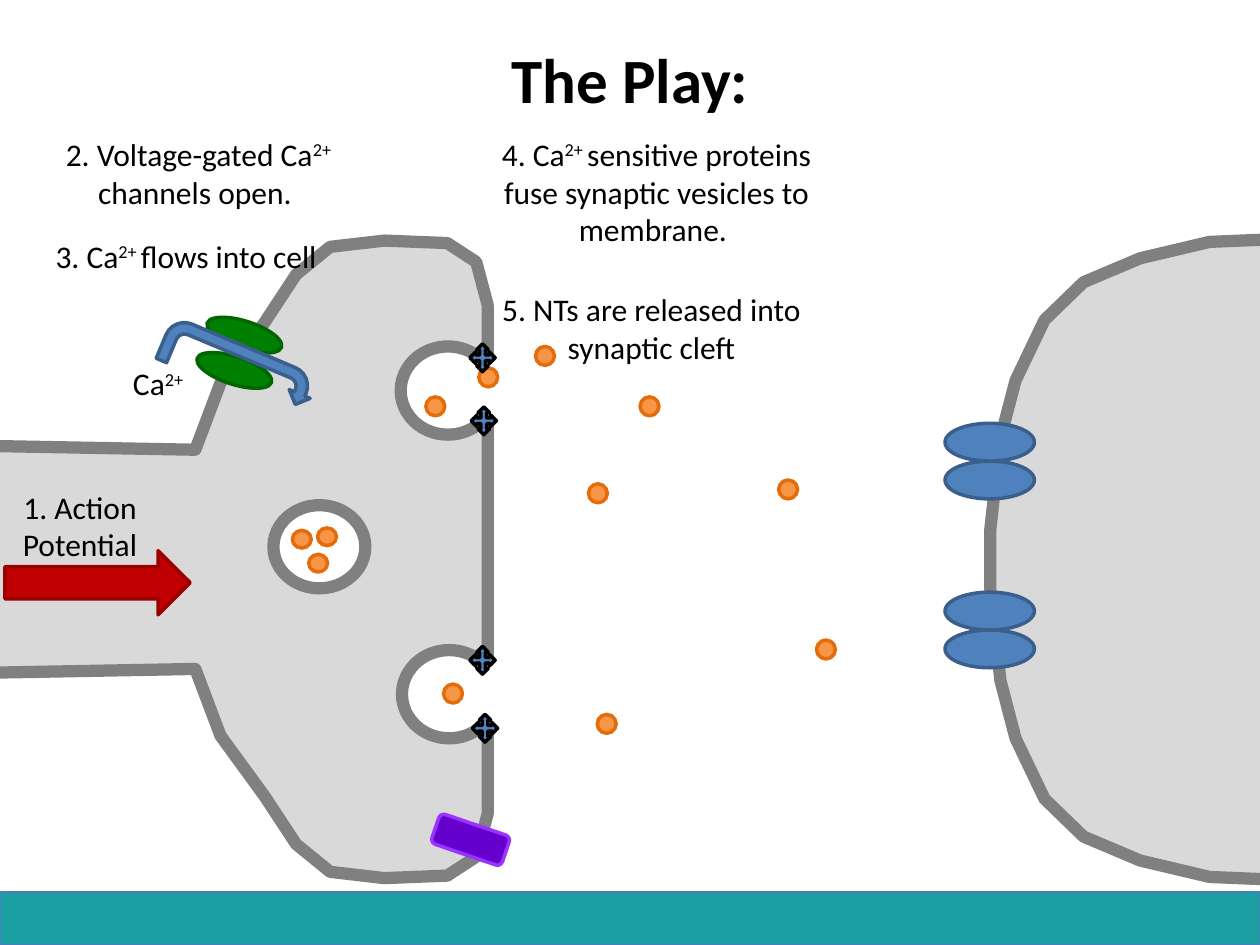
import pptx
import pptx.util
import pptx.dml.color
import pptx.enum.shapes
import pptx.enum.text

Inches = pptx.util.Inches
KIND = pptx.enum.shapes.MSO_SHAPE

COLORS = {
    "teal": "1C9FA3", "teal_edge": "4B7EBC", "cell": "D9D9D9", "membrane": "808080",
    "white": "FFFFFF", "black": "000000", "green": "008000", "green_edge": "006600",
    "orange": "F79646", "orange_edge": "E46C0A", "red": "C00000", "red_edge": "990000",
    "blue": "4F81BD", "blue_edge": "3A5F8C", "purple": "6600CC", "purple_edge": "9933FF",
}
# Each style is fill, line colour, line width in points
STYLES = {
    "footer": ("teal", "teal_edge", 0.75),
    "cell": ("cell", "membrane", 7),
    "vesicle": ("white", "membrane", 7),
    "opening": ("white", None, 0),
    "channel": ("green", "green_edge", 2),
    "transmitter": ("orange", "orange_edge", 2),
    "potential": ("red", "red_edge", 2),
    "receptor": ("blue", "blue_edge", 2),
    "calcium_flow": ("blue", "blue_edge", 2),
    "fusion_protein": ("blue", "black", 2),
    "transporter": ("purple", "purple_edge", 2),
}
TITLE_FONT = {"name": "Calibri", "size": pptx.util.Pt(36), "bold": True}
LABEL_FONT = {"name": "Calibri", "size": pptx.util.Pt(18)}


def paint(shape, style):
    """Give a shape the fill and line of a named style."""
    fill, edge, width = STYLES[style]
    shape.shadow.inherit = False
    shape.fill.solid()
    shape.fill.fore_color.rgb = pptx.dml.color.RGBColor.from_string(COLORS[fill])
    if edge:
        shape.line.color.rgb = pptx.dml.color.RGBColor.from_string(COLORS[edge])
        shape.line.width = pptx.util.Pt(width)
    else:
        shape.line.fill.background()


def write(box, pieces, font):
    """Write one centred paragraph; every second piece is superscript."""
    para = box.text_frame.paragraphs[0]
    para.alignment = pptx.enum.text.PP_ALIGN.CENTER
    for index, piece in enumerate(pieces):
        span = para.add_run()
        span.text = piece
        for name, value in font.items():
            setattr(span.font, name, value)
        span.font.color.rgb = pptx.dml.color.RGBColor.from_string(COLORS["black"])
        if index % 2:
            span.font._element.set("baseline", "30000")


deck = pptx.Presentation()
deck.slide_width, deck.slide_height = Inches(10), Inches(7.5)
page = deck.slides.add_slide(deck.slide_layouts[5])
shapes = page.shapes

# Title
title = shapes.title
title.left, title.top, title.width, title.height = map(Inches, (0, 0, 10, 1.25))
title.text_frame.vertical_anchor = pptx.enum.text.MSO_ANCHOR.MIDDLE
write(title, ["The Play:"], TITLE_FONT)

# Cells: only the upper half is listed, the lower half mirrors it about the axis
cell_axis = 4.44
axon, neck, shoulder = (-0.08, 3.54), (1.55, 3.57), (2.62, 1.96)
terminal_half = [
    axon, neck, (1.75, 3.04), (2.1, 2.56), (2.35, 2.18), shoulder,
    (3.05, 1.91), (3.55, 1.93), (3.78, 2.08), (3.87, 2.42),
]
receiver_half = [
    (10.08, 1.9), (9.6, 1.92), (9.05, 2.05), (8.6, 2.24), (8.29, 2.54),
    (8.06, 3.02), (7.94, 3.48), (7.86, 4.2),
]
for upper in (terminal_half, receiver_half):
    lower = [(x, 2 * cell_axis - y) for x, y in reversed(upper)]
    points = [(Inches(x), Inches(y)) for x, y in upper + lower]
    builder = shapes.build_freeform(*points[0])
    builder.add_line_segments(points[1:], close=True)
    paint(builder.convert_to_shape(), "cell")

# Receptors sit in touching pairs, one pair above the other
receptor_height = 0.3
receptor_places = [(7.5, top + step * receptor_height)
                   for top in (4.7, 3.36) for step in (1, 0)]

# Parts from back to front: container, style, kind, size, rotation, places
closed_vesicle = shapes.add_group_shape().shapes
parts = [
    (shapes, "footer", KIND.RECTANGLE, (10, 0.42), 0, [(0, 7.08)]),
    (shapes, "channel", KIND.OVAL, (0.22, 0.62), -72, [(1.83, 2.35), (1.75, 2.63)]),
    (closed_vesicle, "vesicle", KIND.OVAL, (0.73, 0.66), 0, [(2.17, 4.01)]),
    (closed_vesicle, "transmitter", KIND.OVAL, (0.15, 0.14), 0,
     [(2.32, 4.21), (2.52, 4.19), (2.45, 4.4)]),
    (shapes, "vesicle", KIND.OVAL, (0.75, 0.7), 0, [(3.18, 2.75), (3.19, 5.16)]),
    (shapes, "opening", KIND.RECTANGLE, (0.41, 0.49), 0, [(3.68, 2.84), (3.71, 5.25)]),
    (shapes, "transmitter", KIND.OVAL, (0.15, 0.15), 0,
     [(4.25, 2.75), (3.38, 3.15), (3.52, 5.43), (6.48, 5.08), (4.74, 5.67),
      (5.08, 3.15), (4.67, 3.84), (3.8, 2.92), (6.18, 3.81)]),
    (shapes, "potential", KIND.RIGHT_ARROW, (1.47, 0.51), 0, [(0.04, 4.37)]),
    (shapes, "calcium_flow", KIND.U_TURN_ARROW, (1.25, 0.36), 22.8, [(1.26, 2.74)]),
    (shapes, "receptor", KIND.OVAL, (0.71, receptor_height), 0, receptor_places),
    (shapes, "transporter", KIND.ROUNDED_RECTANGLE, (0.59, 0.25), 18.8, [(3.44, 6.54)]),
    (shapes, "fusion_protein", KIND.QUAD_ARROW, (0.2, 0.22), 0,
     [(3.73, 2.73), (3.74, 3.23), (3.73, 5.13), (3.75, 5.67)]),
]
for container, style, kind, size, rotation, places in parts:
    for place in places:
        shape = container.add_shape(kind, *map(Inches, place + size))
        shape.rotation = rotation
        paint(shape, style)

# Labels: left, top, width, height and the pieces of text
labels = [
    ((-0.08, 3.82, 1.43, 0.71), ["1. Action Potential"]),
    ((0.92, 2.84, 0.67, 0.4), ["Ca", "2+"]),
    ((0.32, 1.02, 2.51, 0.71), ["2. Voltage-gated Ca", "2+ ", "channels open. "]),
    ((3.67, 1.02, 3.08, 1.01),
     ["4. Ca", "2+ ", "sensitive proteins fuse synaptic vesicles to membrane. "]),
    ((0.25, 1.83, 2.51, 0.4), ["3. Ca", "2+ ", "flows into cell "]),
    ((3.63, 2.25, 3.08, 0.71), ["5. NTs are released into synaptic cleft"]),
]
for place, pieces in labels:
    box = shapes.add_textbox(*map(Inches, place))
    box.text_frame.word_wrap = True
    write(box, pieces, LABEL_FONT)

deck.save("out.pptx")
